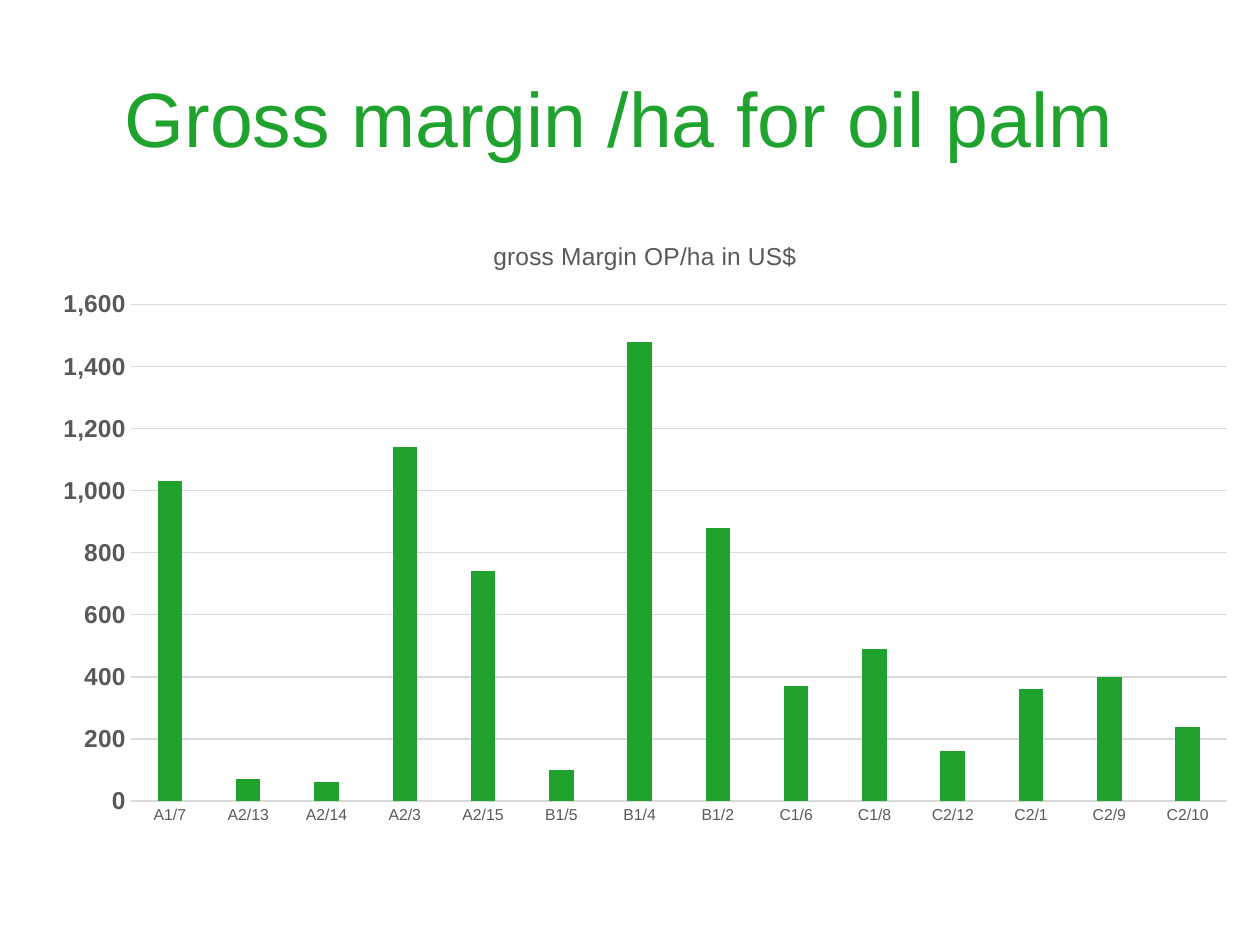
"""Build the slide with the gross margin per hectare of oil palm."""
from typing import NamedTuple

from pptx import Presentation
from pptx import util as u
from pptx.chart.data import CategoryChartData
from pptx.dml.color import RGBColor
from pptx.enum import chart as charts
from pptx.enum import text

COLOURS = {"green": "1FA22E", "grey": "595959", "grid": "D9D9D9", "white": "FFFFFF"}
FONT = "Arial"


class Plot(NamedTuple):
    name: str
    margin: int


class Box(NamedTuple):
    left: float
    top: float
    width: float
    height: float

    def lengths(self) -> list:
        return [u.Cm(value) for value in self]


TITLE_BOX = Box(1.27, 0.76, 22.86, 3.18)
CHART_BOX = Box(0.79, 4.37, 24.43, 12.5)
CHART_TITLE = "gross Margin OP/ha in US$"
PLOTS = [
    Plot("A1/7", 1030), Plot("A2/13", 70), Plot("A2/14", 60), Plot("A2/3", 1140),
    Plot("A2/15", 740), Plot("B1/5", 100), Plot("B1/4", 1480), Plot("B1/2", 880),
    Plot("C1/6", 370), Plot("C1/8", 490), Plot("C2/12", 160), Plot("C2/1", 360),
    Plot("C2/9", 400), Plot("C2/10", 240),
]


def colour(name: str) -> RGBColor:
    return RGBColor.from_string(COLOURS[name])


def style_font(font, size: float, name: str, bold: bool = False) -> None:
    font.name = FONT
    font.size = u.Pt(size)
    font.bold = bold
    font.color.rgb = colour(name)


def style_line(line) -> None:
    line.color.rgb = colour("grid")
    line.width = u.Pt(0.75)


def style_axis(axis, size: float, bold: bool = False) -> None:
    axis.major_tick_mark = charts.XL_TICK_MARK.NONE
    axis.minor_tick_mark = charts.XL_TICK_MARK.NONE
    style_font(axis.tick_labels.font, size, "grey", bold)


def add_title(slide, wording: str, box: Box) -> None:
    frame = slide.shapes.add_textbox(*box.lengths()).text_frame
    frame.word_wrap = True
    frame.vertical_anchor = text.MSO_ANCHOR.MIDDLE
    paragraph = frame.paragraphs[0]
    paragraph.alignment = text.PP_ALIGN.CENTER
    run = paragraph.add_run()
    run.text = wording
    style_font(run.font, 44, "green")


def add_margin_chart(slide, plots: list[Plot], box: Box) -> None:
    data = CategoryChartData(number_format="#,##0")
    data.categories = [plot.name for plot in plots]
    data.add_series(CHART_TITLE, [plot.margin for plot in plots])
    chart = slide.shapes.add_chart(
        charts.XL_CHART_TYPE.COLUMN_CLUSTERED, *box.lengths(), data
    ).chart
    style_font(chart.font, 10, "grey")
    chart.has_legend = False
    chart.has_title = True
    run = chart.chart_title.text_frame.paragraphs[0].add_run()
    run.text = CHART_TITLE
    style_font(run.font, 14, "grey")
    chart.chart_title.include_in_layout = False

    style_axis(chart.category_axis, 9)
    style_line(chart.category_axis.format.line)
    value_axis = chart.value_axis
    style_axis(value_axis, 14, bold=True)
    value_axis.minimum_scale = 0
    value_axis.maximum_scale = 1600
    value_axis.major_unit = 200
    value_axis.tick_labels.number_format = "#,##0"
    value_axis.tick_labels.number_format_is_linked = False
    value_axis.format.line.fill.background()
    style_line(value_axis.major_gridlines.format.line)

    columns = chart.plots[0]
    columns.vary_by_categories = False
    columns.gap_width = 219
    columns.overlap = -27
    fill = columns.series[0].format.fill
    fill.solid()
    fill.fore_color.rgb = colour("green")


def main() -> None:
    presentation = Presentation()
    presentation.slide_width = u.Cm(25.4)
    presentation.slide_height = u.Cm(19.05)
    slide = presentation.slides.add_slide(presentation.slide_layouts[6])
    background = slide.background.fill
    background.solid()
    background.fore_color.rgb = colour("white")
    add_title(slide, "Gross margin /ha for oil palm ", TITLE_BOX)
    add_margin_chart(slide, PLOTS, CHART_BOX)
    presentation.save("out.pptx")


if __name__ == "__main__":
    main()
